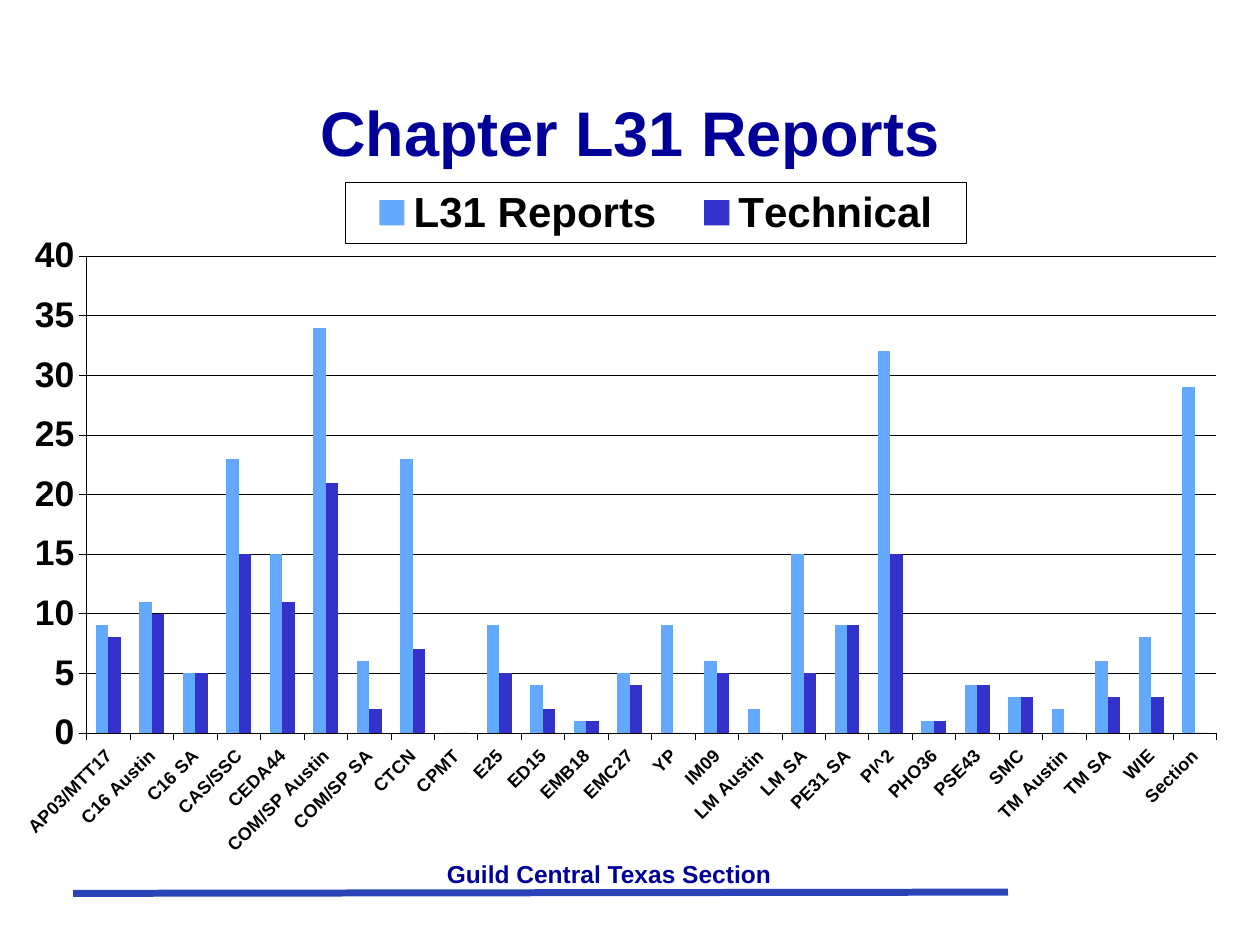
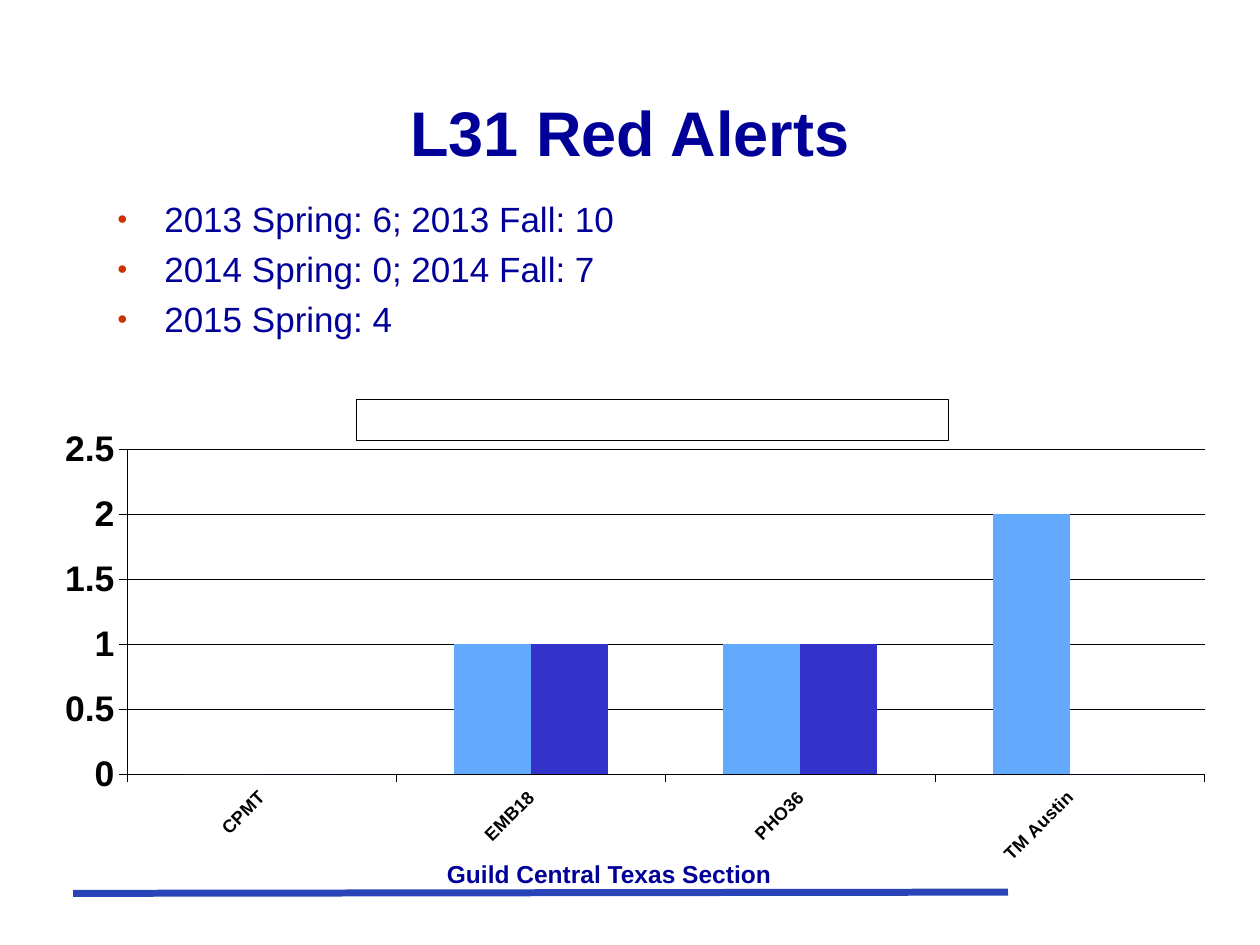
"""Build the two chapter-report slides of the Central Texas Section."""
from lxml import etree
from pptx import Presentation, util as u
from pptx.chart.data import CategoryChartData
from pptx.dml.color import RGBColor
from pptx.enum import chart as charts, shapes, text
from pptx.oxml import parse_xml
from pptx.oxml.ns import nsdecls, qn

NAVY, BLACK, RULE_BLUE, BULLET_RED = "000099", "000000", "2944B7", "CC3300"
FONT = "Arial"
FOOTER = "Guild Central Texas Section"
SERIES = [("L31 Reports", "63AAFE"), ("Technical", "3333CC")]
PLOT_AREA = (0.07, 0.12, 0.912, 0.665)

CHAPTER_REPORTS = [
    ("AP03/MTT17", 9, 8), ("C16 Austin", 11, 10), ("C16 SA", 5, 5),
    ("CAS/SSC", 23, 15), ("CEDA44", 15, 11), ("COM/SP Austin", 34, 21),
    ("COM/SP SA", 6, 2), ("CTCN", 23, 7), ("CPMT", 0, 0), ("E25", 9, 5),
    ("ED15", 4, 2), ("EMB18", 1, 1), ("EMC27", 5, 4), ("YP", 9, 0),
    ("IM09", 6, 5), ("LM Austin", 2, 0), ("LM SA", 15, 5), ("PE31 SA", 9, 9),
    ("PI^2", 32, 15), ("PHO36", 1, 1), ("PSE43", 4, 4), ("SMC", 3, 3),
    ("TM Austin", 2, 0), ("TM SA", 6, 3), ("WIE", 8, 3), ("Section", 29, 0),
]
RED_ALERT_CHAPTERS = ("CPMT", "EMB18", "PHO36", "TM Austin")

SLIDES = [
    {"title": "Chapter L31 Reports", "bullets": [], "rows": CHAPTER_REPORTS,
     "box": (0, 97.2, 707.8, 409.7), "top": 40, "step": 5, "legend_left": 0.279},
    {"title": "L31 Red Alerts",
     "bullets": ["2013 Spring: 6; 2013 Fall: 10", "2014 Spring: 0; 2014 Fall: 7",
                 "2015 Spring: 4"],
     "rows": [row for row in CHAPTER_REPORTS if row[0] in RED_ALERT_CHAPTERS],
     "box": (25.2, 223.2, 675.4, 279.4), "top": 2.5, "step": 0.5, "legend_left": 0.264},
]


def color(hex_value):
    return RGBColor.from_string(hex_value)


def points(values):
    return [u.Pt(value) for value in values]


def style_font(font, size, hex_value=BLACK, bold=True):
    font.name, font.size, font.bold = FONT, u.Pt(size), bold
    font.color.rgb = color(hex_value)


def style_line(line, hex_value=BLACK, width=0.25):
    line.color.rgb = color(hex_value)
    line.width = u.Pt(width)


def add_bullet(paragraph):
    properties = paragraph._p.get_or_add_pPr()
    properties.set("marL", str(u.Pt(27)))
    properties.set("indent", str(-u.Pt(27)))
    for element in (f'<a:buClr {nsdecls("a")}><a:srgbClr val="{BULLET_RED}"/></a:buClr>',
                    f'<a:buSzPct {nsdecls("a")} val="50000"/>',
                    f'<a:buFont {nsdecls("a")} typeface="{FONT}"/>',
                    f'<a:buChar {nsdecls("a")} char="●"/>'):
        properties.append(parse_xml(element))


def add_text(slide, lines, box, size, bold=True, align=text.PP_ALIGN.CENTER,
             anchor=text.MSO_ANCHOR.TOP, inset=3.6, gap=0, bullets=False):
    frame = slide.shapes.add_textbox(*points(box)).text_frame
    frame.word_wrap = True
    frame.vertical_anchor = anchor
    frame.margin_top = u.Pt(inset)
    for index, line in enumerate(lines):
        paragraph = frame.add_paragraph() if index else frame.paragraphs[0]
        if bullets:
            add_bullet(paragraph)
        if index:
            paragraph.space_before = u.Pt(gap)
        paragraph.alignment = align
        run = paragraph.add_run()
        run.text = line
        style_font(run.font, size, NAVY, bold)


def add_footer(slide):
    rule = slide.shapes.add_connector(shapes.MSO_CONNECTOR.STRAIGHT,
                                      *points((41.8, 510.5, 576, 509.8)))
    style_line(rule.line, RULE_BLUE, 4)
    etree.SubElement(rule._element.spPr, qn("a:effectLst"))
    add_text(slide, [FOOTER], (126, 486, 444.2, 23.8), 14, inset=5)


def set_layout(parent, position, fractions, inner=False):
    for old_layout in parent.findall(qn("c:layout")):
        parent.remove(old_layout)
    target = '<c:layoutTarget val="inner"/>' if inner else ""
    modes = '<c:xMode val="edge"/><c:yMode val="edge"/>'
    sizes = "".join(f'<c:{name} val="{value}"/>' for name, value in zip("xywh", fractions))
    parent.insert(position, parse_xml(
        f'<c:layout {nsdecls("c")}><c:manualLayout>{target}{modes}{sizes}'
        '</c:manualLayout></c:layout>'))


def style_legend(chart, left):
    chart.has_legend = True
    legend = chart.legend
    legend.position = charts.XL_LEGEND_POSITION.TOP
    legend.include_in_layout = False
    style_font(legend.font, 24)
    element = legend._element
    set_layout(element, 1, (left, 0.017, 0.501, 0.085))
    element.find(qn("c:txPr")).addprevious(parse_xml(
        f'<c:spPr {nsdecls("c", "a")}><a:solidFill><a:srgbClr val="FFFFFF"/></a:solidFill>'
        f'<a:ln w="{u.Pt(0.25)}"><a:solidFill><a:srgbClr val="{BLACK}"/></a:solidFill></a:ln>'
        '</c:spPr>'))


def style_axes(chart, top, step):
    for axis, size in ((chart.category_axis, 10.3), (chart.value_axis, 20.3)):
        style_font(axis.tick_labels.font, size)
        style_line(axis.format.line)
        axis.major_tick_mark = charts.XL_TICK_MARK.OUTSIDE
        axis.minor_tick_mark = charts.XL_TICK_MARK.NONE
    chart.category_axis.tick_label_position = charts.XL_TICK_LABEL_POSITION.LOW
    labels = chart.category_axis._element.find(qn("c:txPr")).find(qn("a:bodyPr"))
    labels.set("rot", "-2700000")
    labels.set("vert", "horz")
    values = chart.value_axis
    values.minimum_scale, values.maximum_scale, values.major_unit = 0, top, step
    values.has_major_gridlines = True
    style_line(values.major_gridlines.format.line)


def add_report_chart(slide, rows, box, top, step, legend_left):
    chapters, *columns = zip(*rows)
    data = CategoryChartData()
    data.categories = chapters
    for (name, _), column in zip(SERIES, columns):
        data.add_series(name, column)
    chart = slide.shapes.add_chart(charts.XL_CHART_TYPE.COLUMN_CLUSTERED,
                                   *points(box), data).chart
    chart.has_title = False
    style_font(chart.font, 26.1)
    plot = chart.plots[0]
    plot.gap_width, plot.overlap, plot.vary_by_categories = 150, 0, False
    for series, (_, fill) in zip(plot.series, SERIES):
        series.format.fill.solid()
        series.format.fill.fore_color.rgb = color(fill)
        series.invert_if_negative = False
    style_axes(chart, top, step)
    style_legend(chart, legend_left)
    set_layout(chart._chartSpace.chart.plotArea, 0, PLOT_AREA, inner=True)


def main():
    presentation = Presentation()
    presentation.slide_width, presentation.slide_height = points((720, 540))
    for content in SLIDES:
        slide = presentation.slides.add_slide(presentation.slide_layouts[6])
        add_footer(slide)
        add_text(slide, [content["title"]], (54, 30.2, 612, 90), 36,
                 anchor=text.MSO_ANCHOR.MIDDLE)
        if content["bullets"]:
            add_text(slide, content["bullets"], (59.8, 106.6, 612, 115.2), 20, bold=False,
                     align=text.PP_ALIGN.LEFT, inset=6, gap=4.8, bullets=True)
        add_report_chart(slide, content["rows"], content["box"], content["top"],
                         content["step"], content["legend_left"])
    presentation.save("out.pptx")


if __name__ == "__main__":
    main()
